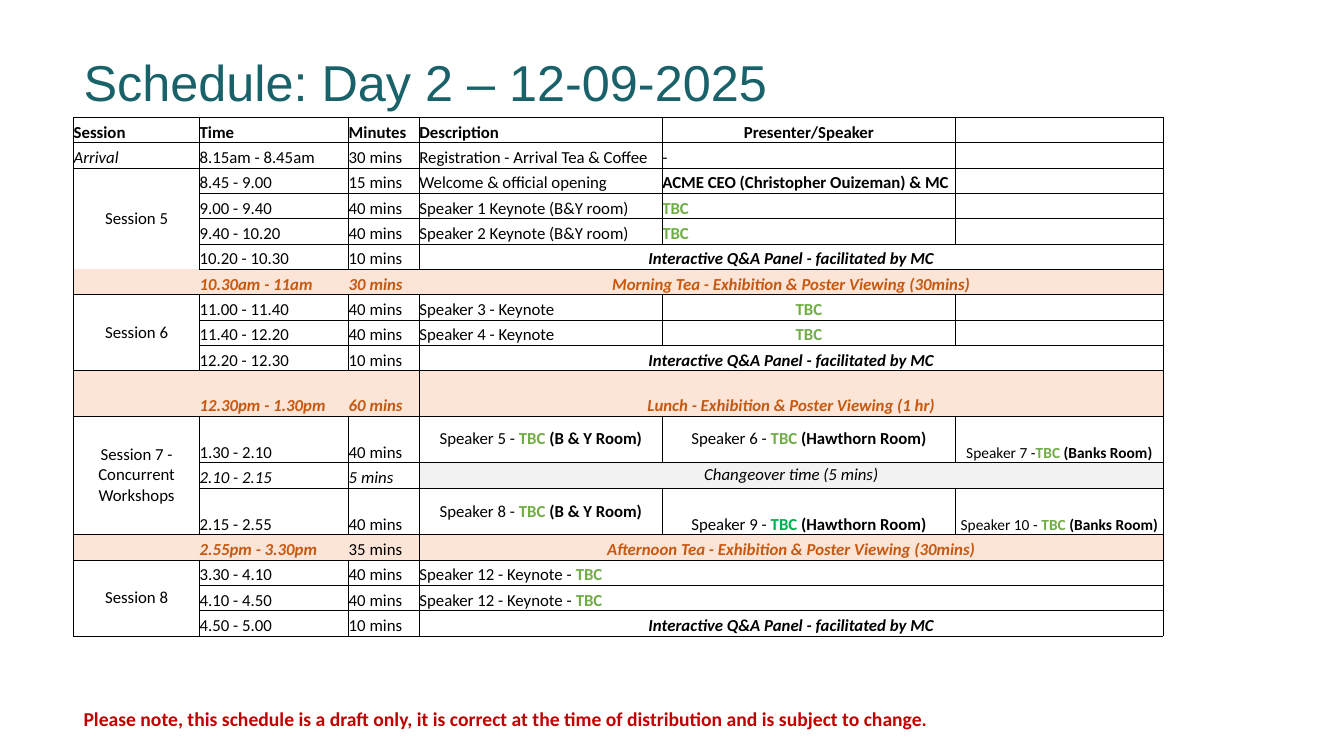
import lxml.etree
import pptx
import pptx.dml.color
import pptx.enum.text
import pptx.oxml.ns
import pptx.util

Pt = pptx.util.Pt
qn = pptx.oxml.ns.qn
ALIGN = pptx.enum.text.PP_ALIGN
ANCHOR = pptx.enum.text.MSO_ANCHOR


def color(hex_code):
    return pptx.dml.color.RGBColor.from_string(hex_code)


def write(paragraph, text, size=12, font="Calibri", ink="000000", bold=False, italic=False):
    run = paragraph.add_run()
    run.text = text
    run.font.size = Pt(size)
    run.font.name = font
    run.font.color.rgb = color(ink)
    run.font.bold = bold
    run.font.italic = italic


deck = pptx.Presentation()
deck.slide_width = Pt(960)
deck.slide_height = Pt(540)
slide = deck.slides.add_slide(deck.slide_layouts[6])

title = slide.shapes.add_textbox(Pt(52.6), Pt(35.3), Pt(821.5), Pt(40.3)).text_frame
title.word_wrap = True
title.margin_top = Pt(6.5)
title.paragraphs[0].line_spacing = 0.9
write(title.paragraphs[0], "Schedule: Day 2 – 12-09-2025", size=36, font="Arial", ink="196269")

notice = slide.shapes.add_textbox(Pt(52.6), Pt(501.1), Pt(707.8), Pt(27.4)).text_frame
notice.word_wrap = True
write(notice.paragraphs[0],
      "Please note, this schedule is a draft only, it is correct at the time of "
      "distribution and is subject to change.", size=14, ink="C00000", bold=True)

PANEL = "Interactive Q&A Panel - facilitated by MC"
# Within a cell, "|" separates plain text, the TBC mark and bold text.
schedule = [
    ("header", "Session", "Time", "Minutes", "Description", "Presenter/Speaker", ""),
    ("opening", "Arrival", "8.15am - 8.45am", "30 mins", "Registration - Arrival Tea & Coffee", "-", ""),
    ("opening", "Session 5", "8.45 - 9.00", "15 mins", "Welcome & official opening",
     "||ACME CEO (Christopher Ouizeman) & MC", ""),
    ("opening", "", "9.00 - 9.40", "40 mins", "Speaker 1 Keynote (B&Y room)", "|TBC", ""),
    ("opening", "", "9.40 - 10.20", "40 mins", "Speaker 2 Keynote (B&Y room)", "|TBC", ""),
    ("panel", "", "10.20 - 10.30", "10 mins", PANEL),
    ("break", "", "10.30am - 11am", "30 mins", "Morning Tea - Exhibition & Poster Viewing (30mins)"),
    ("keynote", "Session 6", "11.00 - 11.40", "40 mins", "Speaker 3 - Keynote", "|TBC", ""),
    ("keynote", "", "11.40 - 12.20", "40 mins", "Speaker 4 - Keynote", "|TBC", ""),
    ("panel", "", "12.20 - 12.30", "10 mins", PANEL),
    ("break", "", "12.30pm - 1.30pm", "60 mins", "Lunch - Exhibition & Poster Viewing (1 hr)"),
    ("workshop", "Session 7 - Concurrent Workshops", "1.30 - 2.10", "40 mins",
     "Speaker 5 - |TBC| (B & Y Room)", "Speaker 6 - |TBC |(Hawthorn Room)",
     "Speaker 7 -|TBC |(Banks Room)"),
    ("changeover", "", "2.10 - 2.15", "5 mins", "Changeover time (5 mins)"),
    ("workshop", "", "2.15 - 2.55", "40 mins", "Speaker 8 - |TBC |(B & Y Room)",
     "Speaker 9 - |TBC |(Hawthorn Room)", "Speaker 10 - |TBC |(Banks Room)"),
    ("break", "", "2.55pm - 3.30pm", "35 mins", "Afternoon Tea - Exhibition & Poster Viewing (30mins)"),
    ("closing", "Session 8", "3.30 - 4.10", "40 mins", "Speaker 12 - Keynote - |TBC"),
    ("closing", "", "4.10 - 4.50", "40 mins", "Speaker 12 - Keynote - |TBC"),
    ("panel", "", "4.50 - 5.00", "10 mins", PANEL),
]
column_widths = [90, 106.5, 50.5, 173.5, 209.5, 148.3]
row_heights = {10: 32.3, 11: 33.4, 13: 33.4}
session_rows = {2: 5, 7: 9, 11: 13, 15: 17}
morning_tea = 6
fills = {"break": "FCE4D6", "changeover": "F2F2F2"}
row_styles = {
    "header": {"bold": True},
    "break": {"ink": "C65911", "bold": True, "italic": True},
    "changeover": {"italic": True},
}

program = slide.shapes.add_table(
    len(schedule), len(column_widths), Pt(52.6), Pt(83.9), Pt(778.3), Pt(370.6)).table
program.first_row = False
program.horz_banding = False
for column, width in zip(program.columns, column_widths):
    column.width = Pt(width)

for r, (kind, *entries) in enumerate(schedule):
    program.rows[r].height = Pt(row_heights.get(r, 18.1))
    entries += [""] * (len(column_widths) - len(entries))
    for c, entry in enumerate(entries):
        cell = program.cell(r, c)
        cell.margin_left = cell.margin_right = cell.margin_top = cell.margin_bottom = 0
        is_session = c == 0 and entry.startswith("Session ")
        centered = (is_session
                    or c >= 3 and kind in ("panel", "break", "changeover", "workshop")
                    or c == 4 and kind in ("header", "keynote"))
        middle = (is_session or c == 3 and kind in ("changeover", "workshop")
                  or (r, c) == (11, 4))
        cell.vertical_anchor = ANCHOR.MIDDLE if middle else ANCHOR.BOTTOM

        style = dict(row_styles.get(kind, {}))
        if kind == "panel" and c == 3:
            style = {"bold": True, "italic": True}
        elif entry == "Arrival":
            style = {"italic": True}
        elif entry == "35 mins":
            style = {}
        style["size"] = 11 if c == 5 else 12
        tbc_ink = "00B050" if entry.startswith("Speaker 9") else "70AD47"
        part_styles = [style, {**style, "ink": tbc_ink, "bold": True}, {**style, "bold": True}]
        paragraph = cell.text_frame.paragraphs[0]
        paragraph.alignment = ALIGN.CENTER if centered else ALIGN.LEFT
        for part, part_style in zip(entry.split("|"), part_styles):
            if part:
                write(paragraph, part, **part_style)
        if not entry:
            lxml.etree.SubElement(paragraph._p, qn("a:endParaRPr"), sz="1200")

        sides = "LRTB"
        if kind == "break":
            sides = ["LTB", "TB", "RTB", "LRTB", "LRTB", "LRTB"][c]
        if r == morning_tea:
            sides = ["LB", "TB", "TB", "RTB", "RTB", "RTB"][c]
        if c == 0 and 2 <= r < morning_tea:
            sides = "LRT"
        properties = cell._tc.get_or_add_tcPr()
        for side in "LRTB":
            border = lxml.etree.SubElement(properties, qn("a:ln" + side), w="6350")
            if side in sides:
                ink = lxml.etree.SubElement(border, qn("a:solidFill"))
                lxml.etree.SubElement(ink, qn("a:srgbClr"), val="000000")
            else:
                lxml.etree.SubElement(border, qn("a:noFill"))
        cell.fill.solid()
        shaded = kind == "break" or c >= 3
        cell.fill.fore_color.rgb = color(fills.get(kind, "FFFFFF") if shaded else "FFFFFF")

    if kind in ("panel", "break", "changeover", "closing"):
        program.cell(r, 3).merge(program.cell(r, 5))

for first, last in session_rows.items():
    program.cell(first, 0).merge(program.cell(last, 0))

deck.save("out.pptx")
